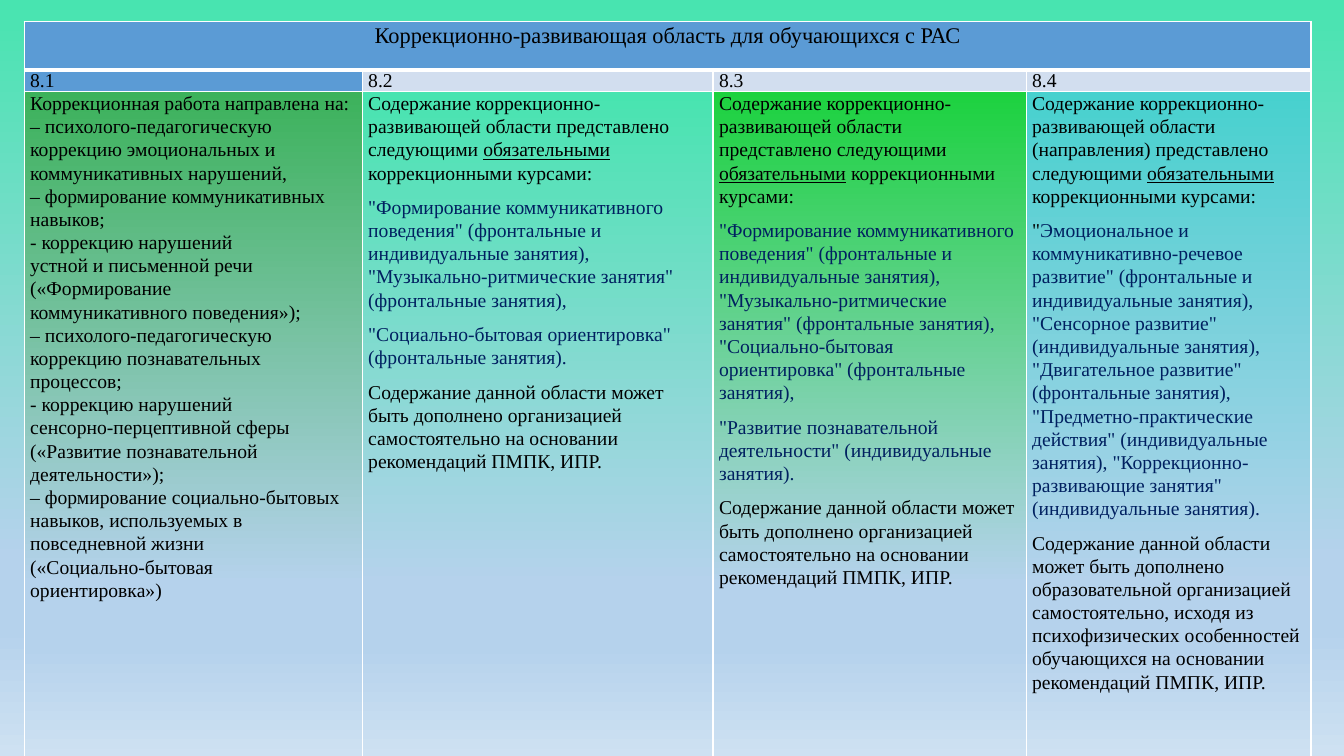
from lxml.etree import SubElement
from pptx import Presentation
from pptx.dml.color import RGBColor
from pptx.enum.text import PP_ALIGN
from pptx.oxml import parse_xml
from pptx.oxml.ns import nsdecls, qn
from pptx.util import Cm, Pt

COLORS = {
    "text": "000000", "course": "002060", "border": "FFFFFF",
    "header": "5B9BD5", "label": "D2DEEF",
    "mint": "48E4B0", "forest": "3CB25B", "green": "1CD23F", "turquoise": "47D1CE",
    "sky": "B5D2EC", "pale": "CEE1F2",
}
FONT = "Times New Roman"
COLUMN_WIDTHS = (8.52, 8.84, 7.89, 7.18)
ROW_HEIGHTS = (1.22, 0.53, 16.8)
TITLE = "Коррекционно-развивающая область для обучающихся с РАС"


def intro(scope=""):
    return [(f"Содержание коррекционно-развивающей области {scope}представлено следующими ", {}),
            ("обязательными", {"underline": True}),
            (" коррекционными курсами:", {})]


def plain(text):
    return [(text, {})]


def course(text):
    return [(text, {"color": "course"})]


ADDITION = plain("Содержание данной области может быть дополнено организацией самостоятельно "
                 "на основании рекомендаций ПМПК, ИПР.")
COMMUNICATION = ('"Формирование коммуникативного поведения" (фронтальные и индивидуальные занятия), '
                 '"Музыкально-ритмические занятия" (фронтальные занятия),')
DAILY_LIFE = '"Социально-бытовая ориентировка" (фронтальные занятия)'

AIMS = [plain(line) for line in (
    "Коррекционная работа направлена на:",
    "– психолого-педагогическую коррекцию эмоциональных и коммуникативных нарушений,",
    "– формирование коммуникативных навыков;",
    "- коррекцию нарушений",
    "устной и письменной речи («Формирование",
    "коммуникативного поведения»);",
    "– психолого-педагогическую коррекцию познавательных процессов;",
    "- коррекцию нарушений",
    "сенсорно-перцептивной сферы («Развитие познавательной деятельности»);",
    "– формирование социально-бытовых навыков, используемых в повседневной жизни",
    "(«Социально-бытовая",
    "ориентировка»)",
)]

# Label, label fill, top colour of the body, space after paragraphs, paragraphs
VARIANTS = [
    ("8.1", "header", "forest", 0, AIMS),
    ("8.2", "label", "mint", 8, [
        intro(), course(COMMUNICATION), course(DAILY_LIFE + "."), ADDITION]),
    ("8.3", "label", "green", 8, [
        intro(), course(f"{COMMUNICATION} {DAILY_LIFE},"),
        course('"Развитие познавательной деятельности" (индивидуальные занятия).'), ADDITION]),
    ("8.4", "label", "turquoise", 8, [
        intro("(направления) "),
        plain('"') + course(
            'Эмоциональное и коммуникативно-речевое развитие" (фронтальные и индивидуальные '
            'занятия), "Сенсорное развитие" (индивидуальные занятия), "Двигательное развитие" '
            '(фронтальные занятия), "Предметно-практические действия" (индивидуальные занятия), '
            '"Коррекционно-развивающие занятия" (индивидуальные занятия).'),
        plain("Содержание данной области может быть дополнено образовательной организацией "
              "самостоятельно, исходя из психофизических особенностей обучающихся на основании "
              "рекомендаций ПМПК, ИПР.")]),
]


def write(paragraph, text, size=14, color="text", underline=False):
    run = paragraph.add_run()
    run.text = text
    font = run.font
    font.name, font.size, font.bold = FONT, Pt(size), False
    font.underline = underline
    font.color.rgb = RGBColor.from_string(COLORS[color])


def fill_gradient(fill, owner, top):
    """Fade downwards from the top colour to pale blue; owner is the XML element holding the fill."""
    fill.gradient()
    fill.gradient_angle = 270
    stops = next(owner.iter(qn("a:gsLst")))
    for stop in list(stops):
        stops.remove(stop)
    for percent, color in ((0, top), (74, "sky"), (83, "sky"), (100, "pale")):
        stop = SubElement(stops, qn("a:gs"), pos=str(percent * 1000))
        SubElement(stop, qn("a:srgbClr"), val=COLORS[color])


def fill_solid(cell, color):
    cell.fill.solid()
    cell.fill.fore_color.rgb = RGBColor.from_string(COLORS[color])


def add_borders(cell, top=1, bottom=1):
    properties = cell._tc.get_or_add_tcPr()
    widths = (("lnL", 1), ("lnR", 1), ("lnT", top), ("lnB", bottom))
    for position, (side, width) in enumerate(widths):
        properties.insert(position, parse_xml(
            f'<a:{side} {nsdecls("a")} w="{Pt(width)}"><a:solidFill>'
            f'<a:srgbClr val="{COLORS["border"]}"/></a:solidFill></a:{side}>'))


def fill_text(cell, paragraphs, space_after=0, line_spacing=1.07, align=PP_ALIGN.LEFT, **style):
    frame = cell.text_frame
    for index, runs in enumerate(paragraphs):
        paragraph = frame.add_paragraph() if index else frame.paragraphs[0]
        paragraph.alignment = align
        paragraph.line_spacing = line_spacing
        paragraph.space_after = Pt(space_after)
        for text, marks in runs:
            write(paragraph, text, **{**style, **marks})


def add_variants_table(slide, left, top):
    table = slide.shapes.add_table(
        len(ROW_HEIGHTS), len(COLUMN_WIDTHS), Cm(left), Cm(top),
        Cm(sum(COLUMN_WIDTHS)), Cm(sum(ROW_HEIGHTS))).table
    table.first_row = table.horz_banding = False
    for column, width in zip(table.columns, COLUMN_WIDTHS):
        column.width = Cm(width)
    for row, height in zip(table.rows, ROW_HEIGHTS):
        row.height = Cm(height)
    for cell in table.iter_cells():
        cell.margin_left = cell.margin_right = Cm(0.15)
        cell.margin_top = cell.margin_bottom = 0

    header = table.cell(0, 0)
    header.merge(table.cell(0, len(COLUMN_WIDTHS) - 1))
    fill_text(header, [plain(TITLE)], align=PP_ALIGN.CENTER, size=16)

    for index, (number, label_fill, body_top, space_after, paragraphs) in enumerate(VARIANTS):
        heading, label, body = (table.cell(row, index) for row in range(len(ROW_HEIGHTS)))
        fill_solid(heading, "header")
        fill_solid(label, label_fill)
        fill_gradient(body.fill, body._tc, body_top)
        fill_text(label, [plain(number)], line_spacing=1)
        fill_text(body, paragraphs, space_after)
        add_borders(heading, bottom=3)
        add_borders(label, top=3)
        add_borders(body)


def main():
    presentation = Presentation()
    presentation.slide_width, presentation.slide_height = Cm(33.87), Cm(19.05)
    slide = presentation.slides.add_slide(presentation.slide_layouts[6])
    fill_gradient(slide.background.fill, slide._element, "mint")
    add_variants_table(slide, left=0.61, top=0.54)
    presentation.save("out.pptx")


if __name__ == "__main__":
    main()
